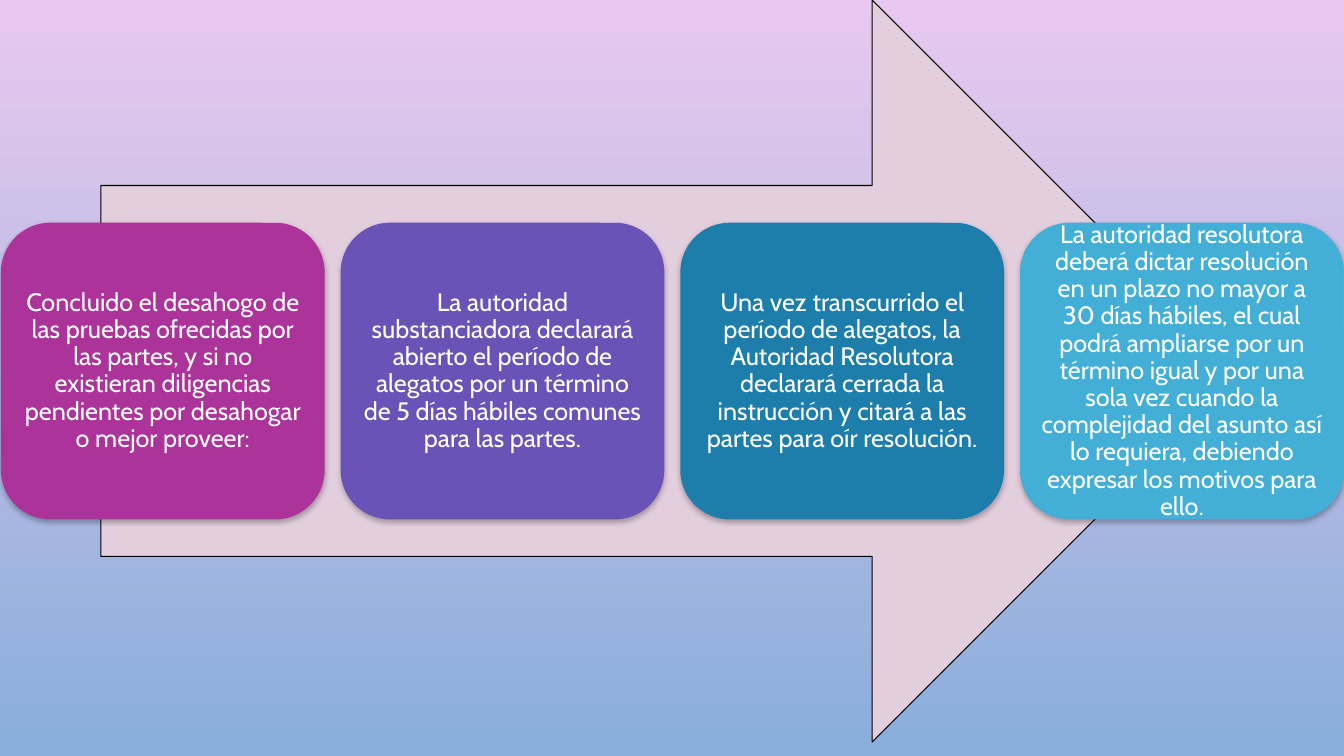
from lxml import etree
from pptx import Presentation
from pptx.dml.color import RGBColor
from pptx.enum.shapes import MSO_SHAPE
from pptx.enum.text import MSO_ANCHOR, PP_ALIGN
from pptx.oxml.ns import qn
from pptx.util import Pt

RIGHT_ARROW = MSO_SHAPE.RIGHT_ARROW
ROUNDED_RECTANGLE = MSO_SHAPE.ROUNDED_RECTANGLE
MIDDLE = MSO_ANCHOR.MIDDLE
CENTER = PP_ALIGN.CENTER

STEP_LEFT, STEP_TOP = 0.72, 159.1
STEP_WIDTH, STEP_HEIGHT = 231.2, 211.9
STEP_PITCH = 242.64

steps = [
    ("AC339A", "Concluido el desahogo de las pruebas ofrecidas por las partes, "
     "y si no existieran diligencias pendientes por desahogar o mejor proveer:"),
    ("6953B7", "La autoridad substanciadora declarará abierto el período de "
     "alegatos por un término de 5 días hábiles comunes para las partes."),
    ("1D7EAB", "Una vez transcurrido el período de alegatos, la Autoridad "
     "Resolutora declarará cerrada la instrucción y citará a las partes para "
     "oír resolución."),
    ("43AFD6", "La autoridad resolutora deberá dictar resolución en un plazo no "
     "mayor a 30 días hábiles, el cual podrá ampliarse por un término igual y "
     "por una sola vez cuando la complejidad del asunto así lo requiera, "
     "debiendo expresar los motivos para ello."),
]


def color(value):
    return RGBColor.from_string(value)


def add_soft_shadow(shape):
    """Give the shape a faint black shadow that falls straight down."""
    effects = shape._element.spPr.find(qn("a:effectLst"))
    shadow = etree.SubElement(
        effects, qn("a:outerShdw"), blurRad=str(Pt(4)), dist=str(Pt(2)),
        dir="5400000", algn="ctr", rotWithShape="0")
    black = etree.SubElement(shadow, qn("a:srgbClr"), val="000000")
    etree.SubElement(black, qn("a:alpha"), val="28000")


presentation = Presentation()
presentation.slide_width = Pt(960)
presentation.slide_height = Pt(540)
slide = presentation.slides.add_slide(presentation.slide_layouts[6])

background = slide.background.fill
background.gradient()
background.gradient_angle = 270
for stop, value in zip(background.gradient_stops, ("E9C8EF", "89AEDB")):
    stop.color.rgb = color(value)

arrow = slide.shapes.add_shape(RIGHT_ARROW, Pt(72), Pt(0), Pt(816), Pt(530))
arrow.fill.solid()
arrow.fill.fore_color.rgb = color("E3CEDE")
arrow.line.color.rgb = color("000000")
arrow.line.width = Pt(0.75)
arrow.shadow.inherit = False

frame_format = {
    "word_wrap": True, "vertical_anchor": MIDDLE,
    "margin_left": Pt(5), "margin_right": Pt(5),
    "margin_top": Pt(5), "margin_bottom": Pt(5),
}
paragraph_format = {"alignment": CENTER, "line_spacing": 0.9}
font_format = {"name": "Cabin", "size": Pt(18)}

for index, (fill, text) in enumerate(steps):
    step = slide.shapes.add_shape(
        ROUNDED_RECTANGLE, Pt(STEP_LEFT + index * STEP_PITCH), Pt(STEP_TOP),
        Pt(STEP_WIDTH), Pt(STEP_HEIGHT))
    step.fill.solid()
    step.fill.fore_color.rgb = color(fill)
    step.line.fill.background()
    step.shadow.inherit = False
    add_soft_shadow(step)

    frame = step.text_frame
    frame.text = text
    paragraph = frame.paragraphs[0]
    font = paragraph.runs[0].font
    font.color.rgb = color("FFFFFF")
    for target, values in ((frame, frame_format), (paragraph, paragraph_format),
                           (font, font_format)):
        for name, value in values.items():
            setattr(target, name, value)

presentation.save("out.pptx")
